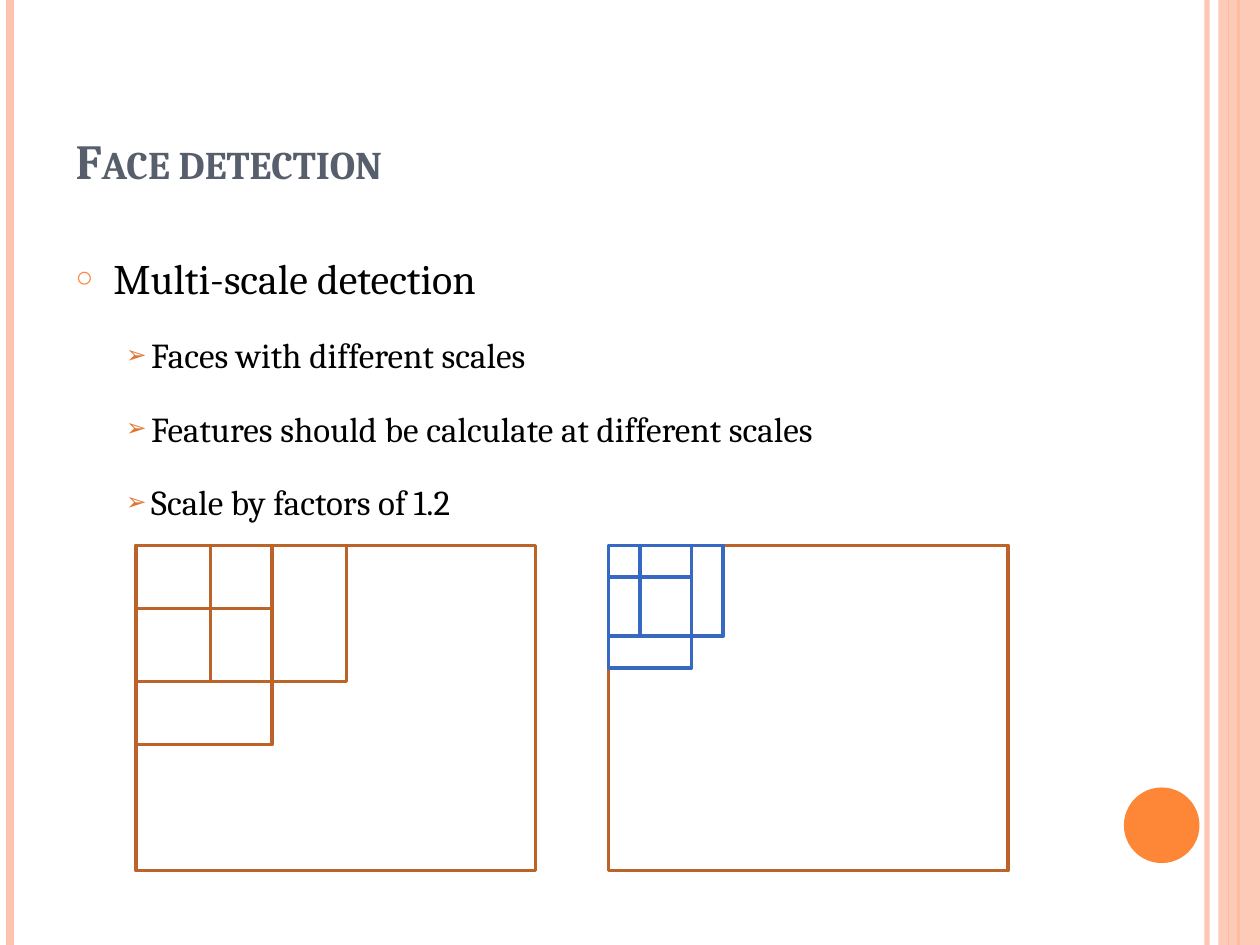
from lxml.etree import SubElement
from pptx import Presentation
from pptx.dml.color import RGBColor
from pptx.enum.shapes import MSO_CONNECTOR, MSO_SHAPE
from pptx.enum.text import MSO_ANCHOR, MSO_AUTO_SIZE, PP_ALIGN
from pptx.oxml.ns import qn
from pptx.util import Inches, Pt

WIDTH, HEIGHT = 10, 7.5
PEACH, ORANGE, BROWN, BLUE = "FEC3AE", "FE8637", "BC6329", "3668C4"

TITLE = "Face detection"
TITLE_FONT = {"name": "Cambria", "size": Pt(28), "bold": True}
BULLETS = [
    (0, "Multi-scale detection"),
    (1, "Faces with different scales"),
    (1, "Features should be calculate at different scales"),
    (1, "Scale by factors of 1.2"),
]
LEVELS = [
    {"size": 24, "margin": 0.3, "indent": -0.3, "bullet": "○", "color": ORANGE},
    {"size": 20, "margin": 0.6, "indent": -0.2, "bullet": "➢", "color": "E07631"},
]
PARAGRAPH_FORMAT = {"line_spacing": 1.5, "space_before": Pt(6), "alignment": PP_ALIGN.LEFT}

STRIPES = [
    (9.58, PEACH, 3, 93),
    (0.08, PEACH, 4.5, 100),
    (9.83, ORANGE, 1.5, 100),
    (9.75, ORANGE, 0.75, 100),
]
BAND = (9.67, 0, 0.33, HEIGHT)
DOT = (8.92, 6.25, 0.6, 0.6)

FRAME_TOP, FRAME_SIZE = 4.33, (3.17, 2.58)
SCANS = [
    {"left": 1.08, "window": (1.08, 1.08), "step": (0.59, 0.5), "color": BROWN},
    {"left": 4.83, "window": (0.66, 0.72), "step": (0.25, 0.25), "color": BLUE},
]


def rgb(value):
    return RGBColor.from_string(value)


def apply(target, values):
    for name, value in values.items():
        setattr(target, name, value)


def place(shape, box):
    apply(shape, dict(zip(("left", "top", "width", "height"), map(Inches, box))))


def set_alpha(shape, percent):
    color = next(shape._element.spPr.iter(qn("a:srgbClr")))
    SubElement(color, qn("a:alpha"), val=str(percent * 1000))


def add_stripe(slide, x, color, width, alpha):
    stripe = slide.shapes.add_connector(
        MSO_CONNECTOR.STRAIGHT, Inches(x), 0, Inches(x), Inches(HEIGHT))
    stripe.line.color.rgb = rgb(color)
    stripe.line.width = Pt(width)
    if alpha < 100:
        set_alpha(stripe, alpha)
    SubElement(stripe._element.spPr, qn("a:effectLst"))


def add_shape(slide, kind, box, fill=None, line=None):
    shape = slide.shapes.add_shape(kind, *map(Inches, box))
    shape.shadow.inherit = False
    if fill:
        shape.fill.solid()
        shape.fill.fore_color.rgb = rgb(fill)
    else:
        shape.fill.background()
    if line:
        shape.line.color.rgb = rgb(line)
        shape.line.width = Pt(2)
    else:
        shape.line.fill.background()
    return shape


def add_decoration(slide):
    for stripe in STRIPES:
        add_stripe(slide, *stripe)
    band = add_shape(slide, MSO_SHAPE.RECTANGLE, BAND, fill=PEACH)
    set_alpha(band, 87)
    add_shape(slide, MSO_SHAPE.OVAL, DOT, fill=ORANGE)


def fill_title(title):
    place(title, (0.5, 0.3, 8.17, 1.25))
    frame = title.text_frame
    frame.text = TITLE
    apply(frame, {"vertical_anchor": MSO_ANCHOR.BOTTOM, "auto_size": MSO_AUTO_SIZE.NONE})
    paragraph = frame.paragraphs[0]
    paragraph.alignment = PP_ALIGN.LEFT
    run = paragraph.runs[0]
    apply(run.font, TITLE_FONT)
    run.font.color.rgb = rgb("575F6D")
    run._r.get_or_add_rPr().set("cap", "small")


def set_bullet(paragraph, level):
    properties = paragraph._p.get_or_add_pPr()
    properties.set("marL", str(Inches(level["margin"])))
    properties.set("indent", str(Inches(level["indent"])))
    color = SubElement(properties, qn("a:buClr"))
    SubElement(color, qn("a:srgbClr"), val=level["color"])
    SubElement(properties, qn("a:buSzPct"), val="70000")
    SubElement(properties, qn("a:buChar"), char=level["bullet"])


def fill_body(body):
    place(body, (0.5, 1.75, 8.17, 5.33))
    frame = body.text_frame
    frame.text = "\n".join(text for _, text in BULLETS)
    frame.auto_size = MSO_AUTO_SIZE.NONE
    for paragraph, (depth, _) in zip(frame.paragraphs, BULLETS):
        level = LEVELS[depth]
        paragraph.level = depth
        apply(paragraph, PARAGRAPH_FORMAT)
        set_bullet(paragraph, level)
        font = paragraph.runs[0].font
        apply(font, {"name": "Cambria", "size": Pt(level["size"])})
        font.color.rgb = rgb("000000")


def add_scan(slide, left, window, step, color):
    add_shape(slide, MSO_SHAPE.RECTANGLE, (left, FRAME_TOP, *FRAME_SIZE), line=BROWN)
    for column, row in ((0, 0), (1, 0), (0, 1)):
        box = (left + column * step[0], FRAME_TOP + row * step[1], *window)
        add_shape(slide, MSO_SHAPE.RECTANGLE, box, line=color)


def main():
    presentation = Presentation()
    apply(presentation, {"slide_width": Inches(WIDTH), "slide_height": Inches(HEIGHT)})
    slide = presentation.slides.add_slide(presentation.slide_layouts[1])
    add_decoration(slide)
    fill_title(slide.shapes.title)
    fill_body(slide.placeholders[1])
    for scan in SCANS:
        add_scan(slide, **scan)
    presentation.save("out.pptx")


if __name__ == "__main__":
    main()
